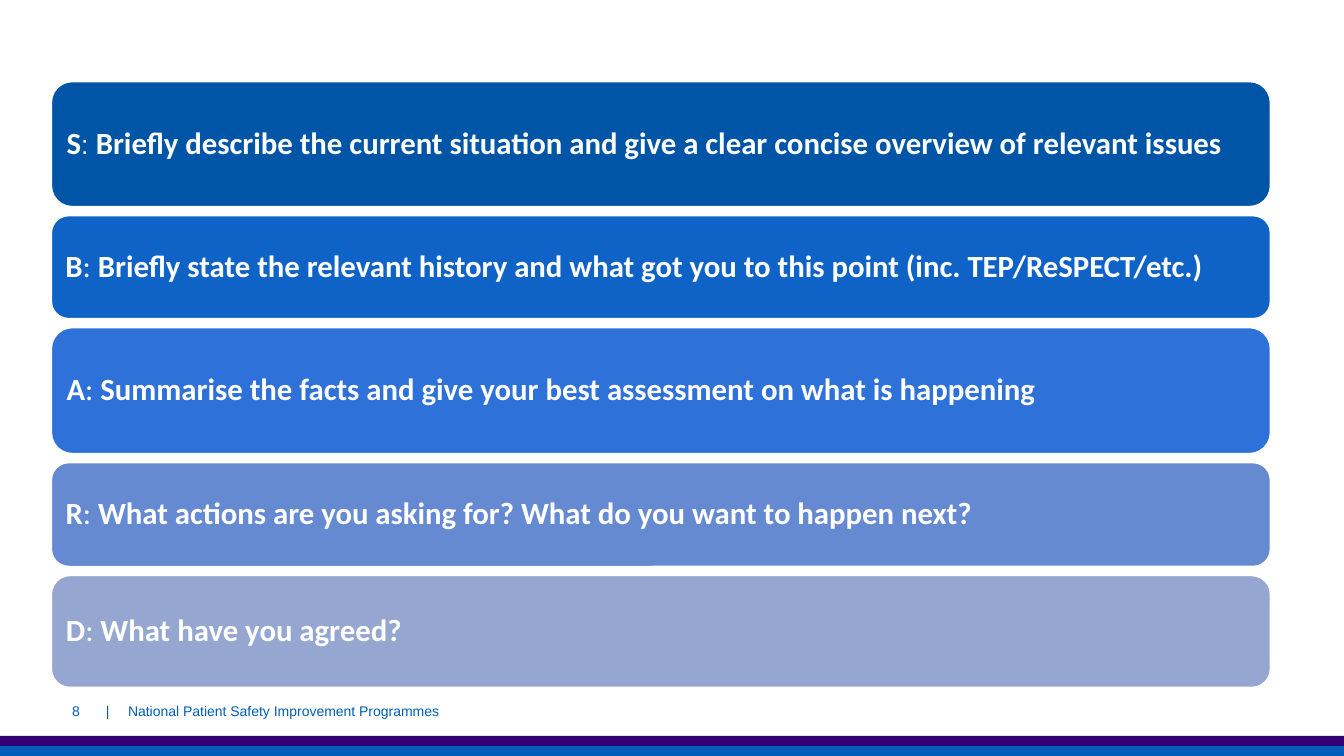
from lxml.etree import SubElement
from pptx import Presentation
from pptx.dml.color import RGBColor
from pptx.enum.shapes import MSO_SHAPE as Preset
from pptx.enum.text import MSO_ANCHOR as Anchor, PP_ALIGN as Align
from pptx.oxml.ns import qn
from pptx.util import Inches, Pt

COLOURS = {
    "white": "FFFFFF",
    "blue": "005EB8",
    "purple": "330072",
    "situation": "0055A7",
    "background": "1063C6",
    "assessment": "2D71D9",
    "recommendation": "658AD2",
    "decision": "95A6D1",
}


def add_box(slide, preset, bounds, colour):
    shape = slide.shapes.add_shape(preset, *[Inches(value) for value in bounds])
    shape.shadow.inherit = False
    shape.fill.solid()
    shape.fill.fore_color.rgb = RGBColor.from_string(COLOURS[colour])
    shape.line.fill.background()
    return shape


def add_run(paragraph, text, colour, formats):
    run = paragraph.add_run()
    run.text = text
    run.font.color.rgb = RGBColor.from_string(COLOURS[colour])
    for name, value in formats.items():
        setattr(run.font, name, value)


presentation = Presentation()
presentation.slide_width = Inches(13.33)
presentation.slide_height = Inches(7.5)
slide = presentation.slides.add_slide(presentation.slide_layouts[6])

for top, colour in [(7.4, "blue"), (7.3, "purple")]:
    add_box(slide, Preset.RECTANGLE, (0, top, 13.33, 0.1), colour)

strong = {"name": "Calibri", "size": Pt(22), "bold": True}
plain = {**strong, "bold": False}
small_colon = {"name": "Arial", "size": Pt(19), "bold": False}
steps = [
    ("situation", 1.24, "S", small_colon,
     "Briefly describe the current situation and give a clear concise overview of relevant issues"),
    ("background", 1.02, "B", plain,
     "Briefly state the relevant history and what got you to this point (inc. TEP/ReSPECT/etc.)"),
    ("assessment", 1.25, "A", plain,
     "Summarise the facts and give your best assessment on what is happening"),
    ("recommendation", 1.03, "R", plain,
     "What actions are you asking for? What do you want to happen next?"),
    ("decision", 1.11, "D", plain, "What have you agreed?"),
]
step_frame = {
    "word_wrap": True,
    "vertical_anchor": Anchor.MIDDLE,
    "margin_left": Inches(0.09),
    "margin_right": Inches(0.09),
    "margin_top": Inches(0.09),
    "margin_bottom": Inches(0.09),
}
gap = 0.09
top = 0.81
for colour, height, letter, colon_format, description in steps:
    box = add_box(slide, Preset.ROUNDED_RECTANGLE, (0.51, top, 12.09, height), colour)
    box.line.color.rgb = RGBColor.from_string(COLOURS["white"])
    box.line.width = Pt(1)
    for name, value in step_frame.items():
        setattr(box.text_frame, name, value)
    paragraph = box.text_frame.paragraphs[0]
    paragraph.alignment = Align.LEFT
    paragraph.line_spacing = 0.9
    add_run(paragraph, letter, "white", strong)
    add_run(paragraph, ": ", "white", colon_format)
    add_run(paragraph, description, "white", strong)
    top += height + gap

footer_format = {"name": "Arial", "size": Pt(10)}
footers = [
    (1.05, 4.5, 0, Align.LEFT, "|\tNational Patient Safety Improvement Programmes"),
    (0.13, 0.76, 0.1, Align.RIGHT, "8"),
]
for left, width, margin, alignment, text in footers:
    footer = slide.shapes.add_textbox(Inches(left), Inches(6.85), Inches(width), Inches(0.4))
    frame_format = {
        "word_wrap": True,
        "vertical_anchor": Anchor.MIDDLE,
        "margin_left": Inches(margin),
        "margin_right": Inches(margin),
    }
    for name, value in frame_format.items():
        setattr(footer.text_frame, name, value)
    paragraph = footer.text_frame.paragraphs[0]
    paragraph.alignment = alignment
    add_run(paragraph, text, "blue", footer_format)
    if "\t" in text:
        tab_list = SubElement(paragraph._p.get_or_add_pPr(), qn("a:tabLst"))
        SubElement(tab_list, qn("a:tab"), pos=str(Inches(0.22)), algn="l")

presentation.save("out.pptx")
